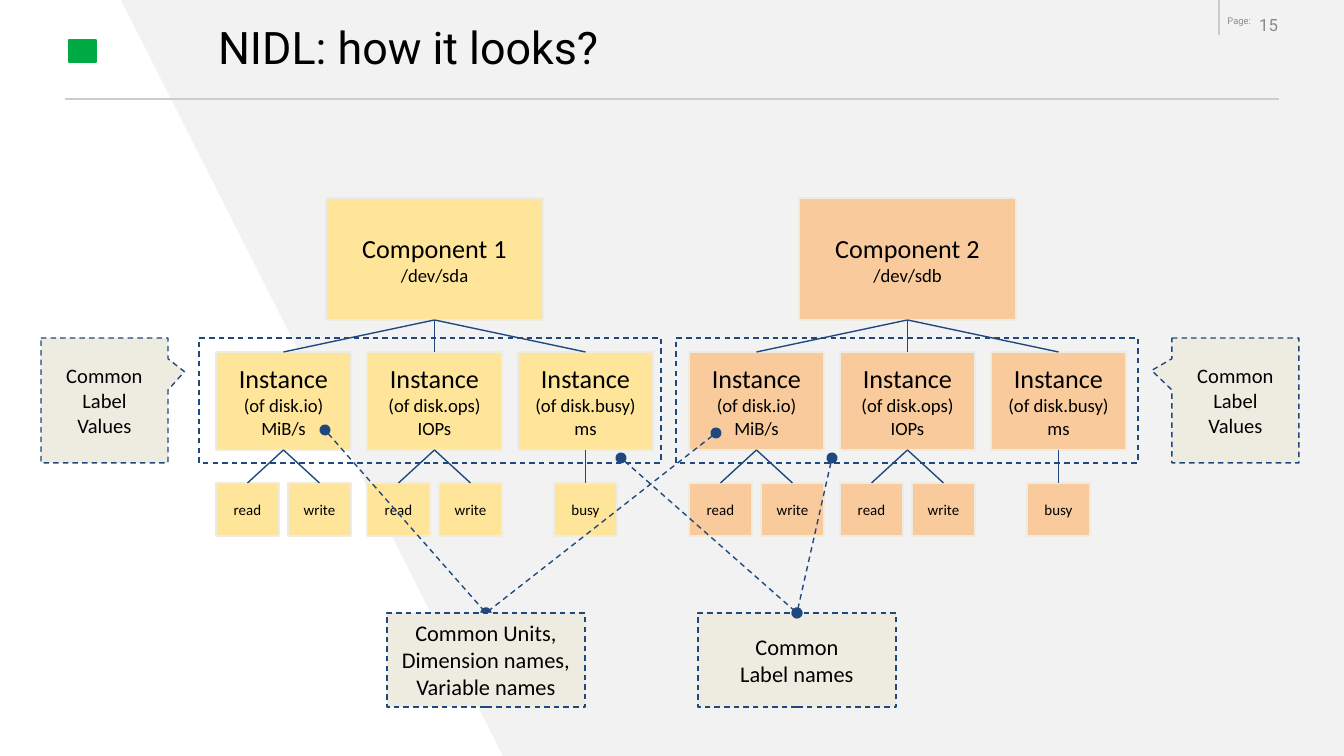
from copy import deepcopy
from dataclasses import dataclass

from lxml.etree import SubElement
from pptx import Presentation
from pptx.dml.color import RGBColor
from pptx.enum.dml import MSO_LINE
from pptx.enum.shapes import MSO_CONNECTOR, MSO_SHAPE
from pptx.enum.text import MSO_ANCHOR, PP_ALIGN
from pptx.oxml.ns import qn
from pptx.util import Emu, Pt

SCALE = 914400 / 134.4  # EMU in one px
NAVY, SAND, BLACK, GREY = "1F497D", "EEECE1", "000000", "898A8D"
RULE = "CCCCCC"
TOP, LEFT, BOTTOM, RIGHT = range(4)  # connection sites


@dataclass
class Box:
    x: int
    y: int
    w: int
    h: int


@dataclass
class Run:
    text: str  # a newline is a line break
    size: int
    font: str = "Calibri"
    color: str = BLACK


@dataclass
class Part:
    name: str
    unit: str
    dims: list[str]


@dataclass
class Family:
    x: int
    fill: str
    name: str
    disk: str


@dataclass
class Note:
    box: Box
    text: str
    starts: list[tuple[int, int]]
    front: bool  # note covers the ends of its links


def px(n: float) -> Emu:
    return Emu(round(n * SCALE))


def rgb(code: str) -> RGBColor:
    return RGBColor.from_string(code)


def place(box: Box) -> list[Emu]:
    return [px(n) for n in (box.x, box.y, box.w, box.h)]


def write(shape, runs: list[Run], align, anchor, inset: int) -> None:
    frame = shape.text_frame
    frame.word_wrap = True
    frame.vertical_anchor = anchor
    frame.margin_left = frame.margin_right = px(inset)
    frame.margin_top = frame.margin_bottom = px(inset)
    para = frame.paragraphs[0]
    para.alignment = align
    for item in runs:
        for i, line in enumerate(item.text.split("\n")):
            if i:
                para.add_line_break()
                # a break keeps the size of the text before it
                para._p[-1].append(deepcopy(run._r.rPr))
            if not line:
                continue
            run = para.add_run()
            run.text = line
            run.font.size = Pt(item.size)
            run.font.name = item.font
            run.font.color.rgb = rgb(item.color)


def label(box: Box, run: Run, align=PP_ALIGN.LEFT) -> None:
    write(shapes.add_textbox(*place(box)), [run], align, MSO_ANCHOR.TOP, 0)


def block(box: Box, fill: str | None, runs: list[Run], line: str = SAND,
          dash: bool = False, kind=MSO_SHAPE.RECTANGLE):
    shape = shapes.add_shape(kind, *place(box))
    shape.shadow.inherit = False
    if fill:
        shape.fill.solid()
        shape.fill.fore_color.rgb = rgb(fill)
    else:
        shape.fill.background()
    shape.line.color.rgb = rgb(line)
    shape.line.width = Pt(0.75)
    if dash:
        shape.line.dash_style = MSO_LINE.DASH
    write(shape, runs, PP_ALIGN.CENTER, MSO_ANCHOR.MIDDLE, 13)
    return shape


def link(x1: int, y1: int, x2: int, y2: int, color: str = NAVY):
    line = shapes.add_connector(MSO_CONNECTOR.STRAIGHT, px(x1), px(y1), px(x2), px(y2))
    line.line.color.rgb = rgb(color)
    line.line.width = Pt(0.75)
    SubElement(line._element.spPr, qn("a:effectLst"))
    return line


def branch(upper, lower) -> None:
    line = link(0, 0, 0, 0)
    line.begin_connect(upper, BOTTOM)
    line.end_connect(lower, TOP)


def dots(line) -> None:
    line.line.dash_style = MSO_LINE.DASH
    for tag in ("a:headEnd", "a:tailEnd"):
        SubElement(line.line._ln, qn(tag), type="oval")


def tree(kin: Family, parts: list[Part]) -> None:
    root = block(Box(kin.x + 110, 198, 217, 122), kin.fill,
                 [Run(kin.name + "\n", 14), Run(kin.disk, 10)])
    for i, part in enumerate(parts):
        x = kin.x + 151 * i
        node = block(Box(x, 352, 135, 98), kin.fill,
                     [Run("Instance\n", 14), Run(f"(of {part.name})\n{part.unit}", 10)])
        branch(root, node)
        first = x + 36 * (2 - len(part.dims))
        for j, dim in enumerate(part.dims):
            leaf = block(Box(first + 72 * j, 483, 63, 53), kin.fill, [Run(dim, 8)])
            branch(node, leaf)


def remark(note: Note) -> None:
    shape = block(note.box, SAND, [Run(note.text, 12)], NAVY, True)
    for x, y in note.starts:
        line = link(x, y, x, y)
        line.end_connect(shape, TOP)
        dots(line)
    if note.front:
        shapes._spTree.append(shape._element)


deck = Presentation()
deck.slide_width, deck.slide_height = px(1344), px(756)
shapes = deck.slides.add_slide(deck.slide_layouts[6]).shapes

# Backdrop and header
pen = shapes.build_freeform(1344, 0, scale=SCALE)
pen.add_line_segments([(121, 0), (503, 756), (1344, 756)], close=True)
back = pen.convert_to_shape()
back.shadow.inherit = False
back.fill.solid()
back.fill.fore_color.rgb = rgb("F2F2F2")
back.line.fill.background()
link(65, 99, 1279, 99, RULE)
link(1219, 0, 1219, 35, RULE)
label(Box(1212, 15, 39, 12), Run("Page:", 5, "Roboto", GREY), PP_ALIGN.RIGHT)
label(Box(1240, 15, 38, 20), Run("15", 9, "Roboto", GREY), PP_ALIGN.RIGHT)
block(Box(69, 40, 27, 22), "00AB44", [], "00AB44")
label(Box(218, 20, 907, 54), Run("NIDL: how it looks?", 24, "Roboto"))

# Component trees
PARTS = [
    Part("disk.io", "MiB/s", ["read", "write"]),
    Part("disk.ops", "IOPs", ["read", "write"]),
    Part("disk.busy", "ms", ["busy"]),
]
tree(Family(216, "FFE599", "Component 1", "/dev/sda"), PARTS)
tree(Family(689, "F9CB9C", "Component 2", "/dev/sdb"), PARTS)

# Frames around the instances
for x in (676, 199):
    block(Box(x, 338, 462, 125), None, [], NAVY, True)

# Side callouts
for x, tip in ((1172, (-0.66, -0.24)), (41, (0.63, -0.23))):
    call = block(Box(x, 338, 127, 125), SAND, [Run("Common Label\nValues", 11)],
                 NAVY, True, MSO_SHAPE.RECTANGULAR_CALLOUT)
    call.adjustments[0], call.adjustments[1] = tip

# Notes with dotted links
remark(Note(Box(387, 613, 198, 94), "Common Units, Dimension names, Variable names",
            [(325, 430), (716, 433)], True))
remark(Note(Box(698, 613, 198, 94), "Common\nLabel names",
            [(832, 458), (621, 458)], False))

deck.save("out.pptx")
